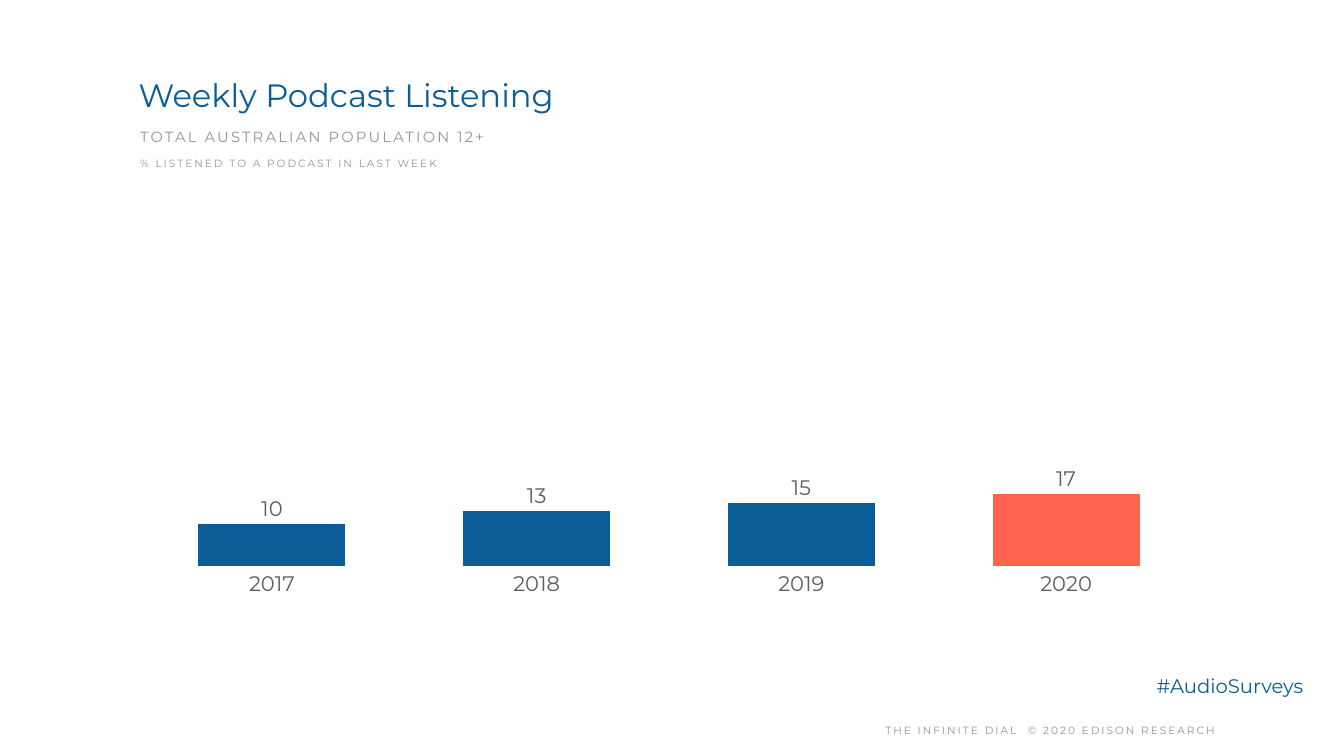
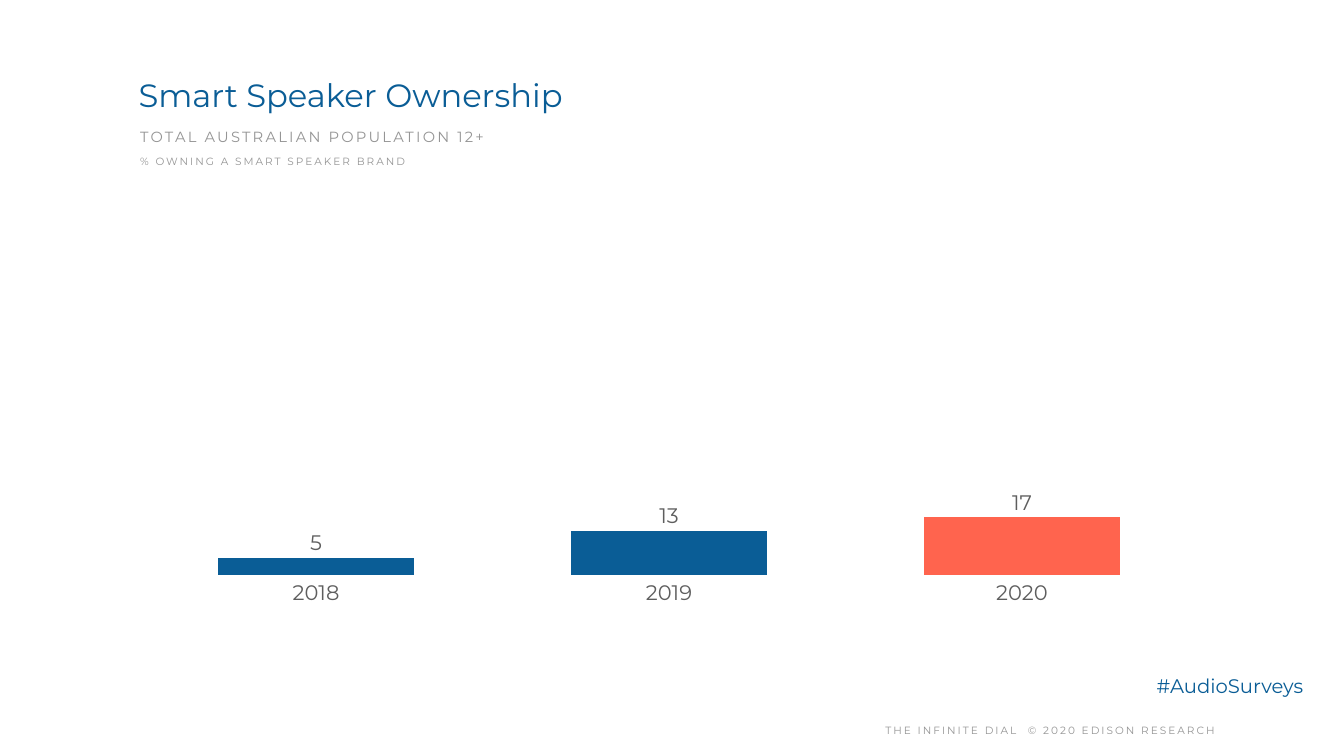
from lxml import etree
from pptx import Presentation
from pptx import util as u
from pptx.chart.data import CategoryChartData
from pptx.dml.color import RGBColor
from pptx.enum import chart as ch, text as t
from pptx.oxml.ns import qn

COLOURS = {"paper": "FFFFFF", "blue": "0A5D96", "coral": "FF644E",
           "grey": "959595", "label": "5E5E5E"}
FONT = "Montserrat"
PX = 9144
SLIDE_SIZE = (2667, 1500)
INSET = 8

POPULATION = "TOTAL AUSTRALIAN POPULATION 12+"
HASHTAG = "#AudioSurveys"
COPYRIGHT = "THE INFINITE DIAL  © 2020 EDISON RESEARCH"

TITLE_STYLE = {"size": 46, "colour": "blue"}
POPULATION_STYLE = {"size": 21, "spacing": 315, "line": 1.2, "middle": True, "grow": True}
MEASURE_STYLE = {"size": 15, "spacing": 290, "line": 1.2, "middle": True, "grow": True}
HASHTAG_STYLE = {"size": 28, "colour": "blue", "line": 1.1}
COPYRIGHT_STYLE = {"size": 15, "spacing": 290, "line": 1.2, "middle": True, "centred": True}

PLOT_AREA = {"x": 0.014, "y": 0.123, "w": 0.981, "h": 0.795}

SLIDES = [
    {"title": "Weekly Podcast Listening",
     "measure": "% LISTENED TO A PODCAST IN LAST WEEK",
     "measure_box": (270, 298, 722, 46),
     "percent": {"2017": 10, "2018": 13, "2019": 15, "2020": 17},
     "chart_box": (247, 150, 2142, 1061)},
    {"title": "Smart Speaker Ownership",
     "measure": "% OWNING A SMART SPEAKER BRAND",
     "measure_box": (270, 295, 1235, 46),
     "percent": {"2018": 5, "2019": 13, "2020": 17},
     "chart_box": (247, 361, 2142, 850)},
]


def emu(lengths):
    return [length * PX for length in lengths]


def rgb(name):
    return RGBColor.from_string(COLOURS[name])


def set_font(font, size, colour):
    font.name = FONT
    font.size = u.Pt(size)
    font.color.rgb = rgb(colour)


def add_text(slide, words, box, size, colour="grey", spacing=0, line=None,
             middle=False, centred=False, grow=False):
    frame = slide.shapes.add_textbox(*emu(box)).text_frame
    frame.word_wrap = True
    frame.auto_size = t.MSO_AUTO_SIZE.SHAPE_TO_FIT_TEXT if grow else t.MSO_AUTO_SIZE.NONE
    frame.vertical_anchor = t.MSO_ANCHOR.MIDDLE if middle else t.MSO_ANCHOR.TOP
    frame.margin_left = frame.margin_right = INSET * PX
    frame.margin_top = frame.margin_bottom = INSET * PX
    paragraph = frame.paragraphs[0]
    paragraph.alignment = t.PP_ALIGN.CENTER if centred else t.PP_ALIGN.LEFT
    if line:
        paragraph.line_spacing = line
    run = paragraph.add_run()
    run.text = words
    set_font(run.font, size, colour)
    if spacing:
        run.font._element.set("spc", str(spacing))


def place_plot(chart):
    plot_area = chart._chartSpace.find(".//" + qn("c:plotArea"))
    for old in plot_area.findall(qn("c:layout")):
        plot_area.remove(old)
    layout = etree.Element(qn("c:layout"))
    manual = etree.SubElement(layout, qn("c:manualLayout"))
    settings = {"layoutTarget": "inner", "xMode": "edge", "yMode": "edge", **PLOT_AREA}
    for tag, value in settings.items():
        etree.SubElement(manual, qn("c:" + tag)).set("val", str(value))
    plot_area.insert(0, layout)


def add_year_chart(slide, percent, box):
    data = CategoryChartData(number_format="General")
    data.categories = list(percent)
    data.add_series("Series 1", list(percent.values()))
    chart = slide.shapes.add_chart(ch.XL_CHART_TYPE.COLUMN_CLUSTERED, *emu(box), data).chart
    chart.has_title = chart.has_legend = False
    set_font(chart.font, 10, "grey")
    place_plot(chart)

    years = chart.category_axis
    years.major_tick_mark = years.minor_tick_mark = ch.XL_TICK_MARK.NONE
    years.tick_label_position = ch.XL_TICK_LABEL_POSITION.LOW
    years.format.line.fill.background()
    set_font(years.tick_labels.font, 30, "label")

    scale = chart.value_axis
    scale.minimum_scale, scale.maximum_scale, scale.major_unit = 0, 100, 20
    scale.has_major_gridlines = False
    scale.visible = False

    columns = chart.plots[0]
    columns.gap_width, columns.overlap = 80, -10
    columns.vary_by_categories = False
    series = columns.series[0]
    series.format.fill.solid()
    series.format.fill.fore_color.rgb = rgb("blue")
    latest = series.points[len(percent) - 1].format.fill
    latest.solid()
    latest.fore_color.rgb = rgb("coral")

    labels = series.data_labels
    labels.show_value = True
    labels.position = ch.XL_LABEL_POSITION.OUTSIDE_END
    labels.number_format, labels.number_format_is_linked = "#,##0", False
    set_font(labels.font, 30, "label")


def add_slide(deck, content):
    slide = deck.slides.add_slide(deck.slide_layouts[6])
    slide.background.fill.solid()
    slide.background.fill.fore_color.rgb = rgb("paper")
    add_text(slide, COPYRIGHT, (1495, 1421, 1178, 53), **COPYRIGHT_STYLE)
    add_text(slide, HASHTAG, (2287, 1325, 329, 68), **HASHTAG_STYLE)
    add_year_chart(slide, content["percent"], content["chart_box"])
    add_text(slide, content["title"], (267, 141, 2169, 123), **TITLE_STYLE)
    add_text(slide, POPULATION, (270, 238, 2255, 58), **POPULATION_STYLE)
    add_text(slide, content["measure"], content["measure_box"], **MEASURE_STYLE)


def main():
    deck = Presentation()
    deck.slide_width, deck.slide_height = emu(SLIDE_SIZE)
    for content in SLIDES:
        add_slide(deck, content)
    deck.save("out.pptx")


if __name__ == "__main__":
    main()
